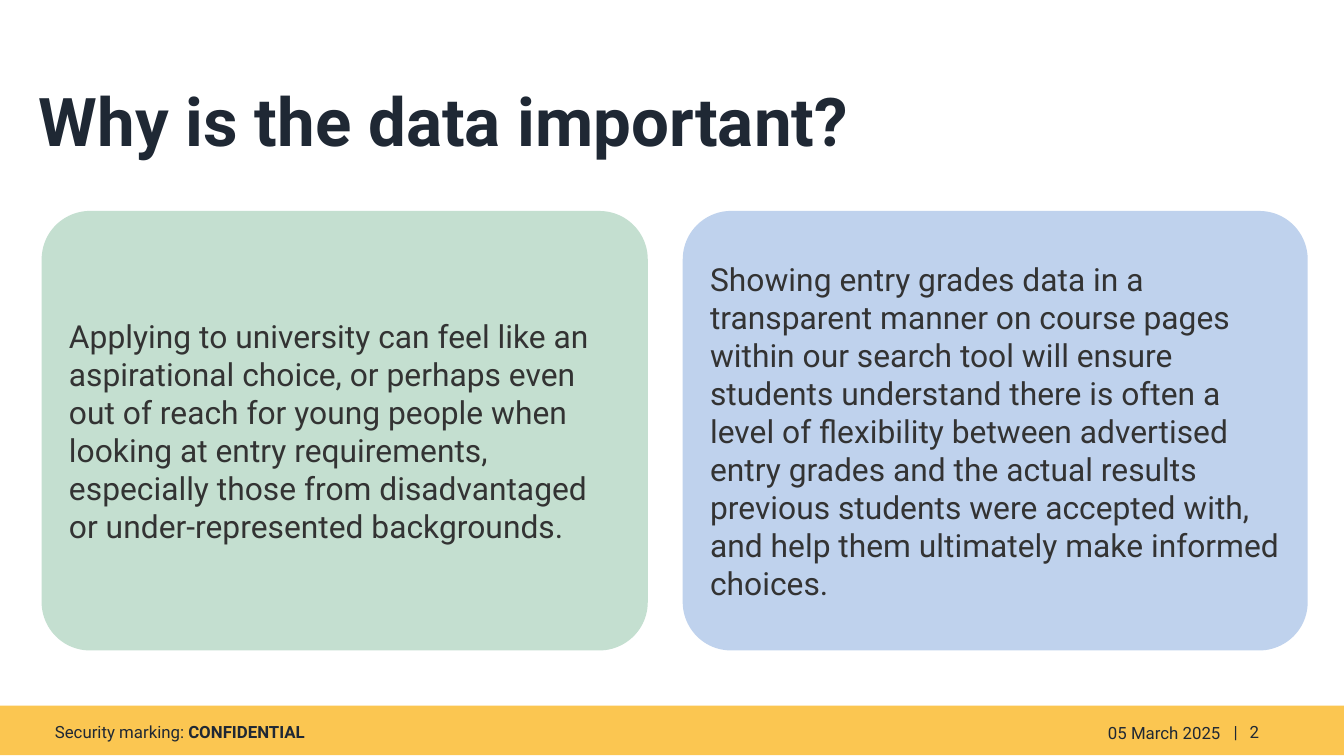
from dataclasses import dataclass

from lxml import etree
from pptx import Presentation
from pptx.dml.color import RGBColor
from pptx.enum.shapes import MSO_SHAPE as Shape
from pptx.enum.text import MSO_ANCHOR as Anchor, PP_ALIGN as Align
from pptx.oxml.ns import qn
from pptx.util import Inches, Pt


@dataclass(frozen=True)
class Theme:
    font: str = "Roboto"
    ink: str = "1F2834"
    body: str = "333333"
    band: str = "FBC651"
    green: str = "C4DFD0"
    blue: str = "BFD2ED"
    title_size: int = 36
    body_size: int = 17
    footer_size: int = 9


theme = Theme()


def add_panel(kind, left, top, width, height, fill):
    panel = slide.shapes.add_shape(
        kind, Inches(left), Inches(top), Inches(width), Inches(height))
    panel.shadow.inherit = False
    panel.fill.solid()
    panel.fill.fore_color.rgb = RGBColor.from_string(fill)
    panel.line.fill.background()
    return panel


def write(frame, runs, size, color, anchor=Anchor.MIDDLE, align=Align.LEFT):
    frame.word_wrap = True
    frame.vertical_anchor = anchor
    paragraph = frame.paragraphs[0]
    paragraph.alignment = align
    for text, bold in runs:
        run = paragraph.add_run()
        run.text = text
        run.font.name = theme.font
        run.font.size = Pt(size)
        run.font.bold = bold
        run.font.color.rgb = RGBColor.from_string(color)
    return paragraph


# Widescreen 16:9 slide
prs = Presentation()
prs.slide_width = Inches(10)
prs.slide_height = Inches(10) * 9 // 16
slide = prs.slides.add_slide(prs.slide_layouts[6])

# Footer band
add_panel(Shape.RECTANGLE, 0, 5.25, 10, 0.37, theme.band)

# Title
title = slide.shapes.add_textbox(
    Inches(0.29), Inches(0.09), Inches(8.32), Inches(1.11)).text_frame
title.margin_left = title.margin_right = title.margin_top = title.margin_bottom = 0
heading = write(title, [("Why is the data important?", True)],
                theme.title_size, theme.ink, Anchor.BOTTOM)
heading.line_spacing = 0.9

# Footer: date, page number and marking (last value is the right inset)
footer_items = [
    (6.52, 2.56, 0.26, Align.RIGHT, [("05 March 2025", False)], 0),
    (9.08, 0.6, 0.25, Align.LEFT, [("|\t2", False)], 0.1),
    (0.31, 4.9, 0.25, Align.LEFT,
     [("Security marking: ", False), ("CONFIDENTIAL", True)], 0.1),
]
for left, width, height, align, runs, inset in footer_items:
    footer = slide.shapes.add_textbox(
        Inches(left), Inches(5.32), Inches(width), Inches(height)).text_frame
    footer.margin_right = Inches(inset)
    line = write(footer, runs, theme.footer_size, theme.ink, align=align)
    if "\t" in line.text:
        # Tab stop between the bar and the page number
        tab_list = etree.SubElement(line._p.get_or_add_pPr(), qn("a:tabLst"))
        etree.SubElement(tab_list, qn("a:tab"), pos=str(Inches(0.12)), algn="l")

# Reason cards
reasons = [
    (0.31, 4.51, theme.green,
     "Applying to university can feel like an aspirational choice, or perhaps "
     "even out of reach for young people when looking at entry requirements, "
     "especially those from disadvantaged or under-represented backgrounds."),
    (5.08, 4.65, theme.blue,
     "Showing entry grades data in a transparent manner on course pages within "
     "our search tool will ensure students understand there is often a level of "
     "flexibility between advertised entry grades and the actual results previous "
     "students were accepted with, and help them ultimately make informed choices."),
]
for left, width, fill, reason in reasons:
    card = add_panel(Shape.ROUNDED_RECTANGLE, left, 1.57, width, 3.27, fill)
    card.adjustments[0] = 0.11
    write(card.text_frame, [(reason, False)], theme.body_size, theme.body)

prs.save("out.pptx")
